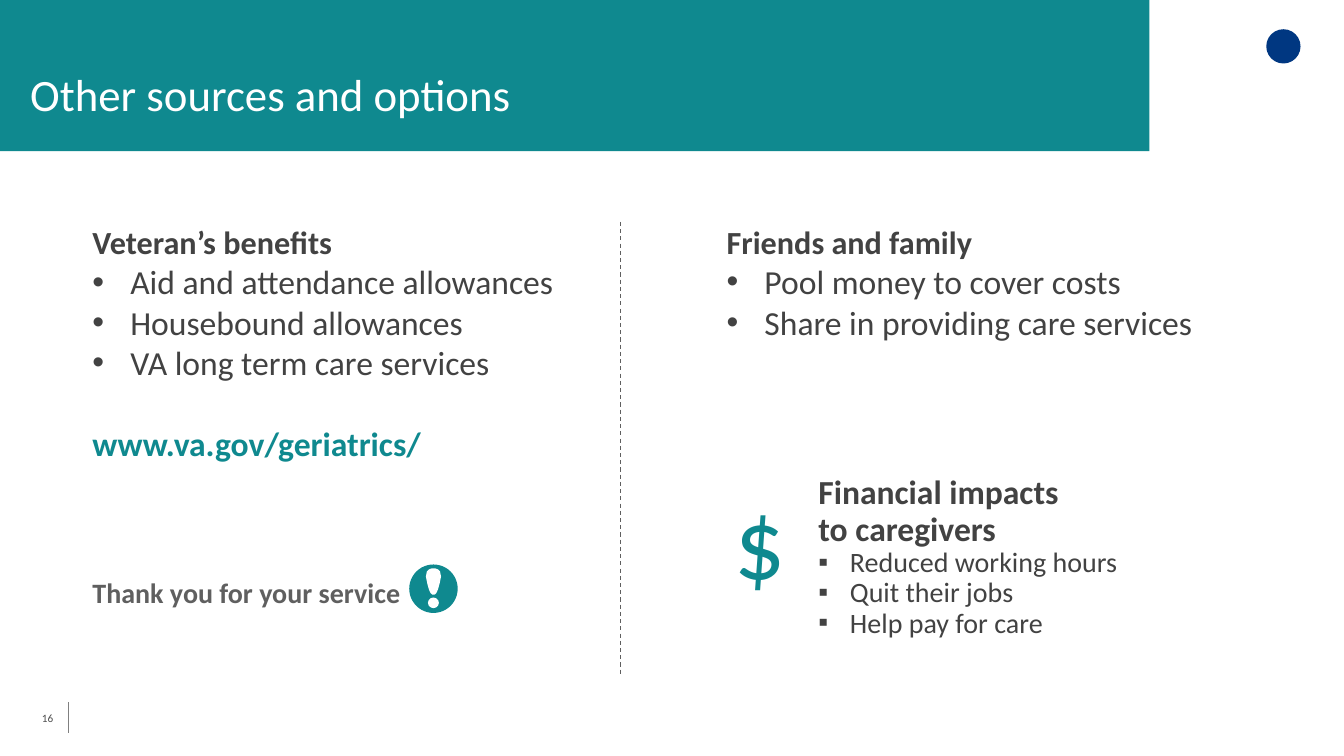
import pptx
import pptx.util
import pptx.dml.color
import pptx.enum.dml
import pptx.enum.shapes
import pptx.enum.text
from lxml import etree
from pptx.oxml.ns import qn

Pt = pptx.util.Pt
RGB = pptx.dml.color.RGBColor
SHAPE = pptx.enum.shapes.MSO_SHAPE
ANCHOR = pptx.enum.text.MSO_ANCHOR
ALIGN = pptx.enum.text.PP_ALIGN

TEAL = RGB(0x0F, 0x89, 0x8F)
NAVY = RGB(0x00, 0x37, 0x81)
WHITE = RGB(0xFF, 0xFF, 0xFF)
DARK = RGB(0x42, 0x42, 0x42)
GREY = RGB(0x5F, 0x5F, 0x5F)
RULE = RGB(0x80, 0x80, 0x80)
NUMBER = RGB(0x4D, 0x4D, 0x4D)
FONT = "Calibri"


def add_text(tf, text, size=24, color=DARK, bold=False, bullet=None, indent=0,
             spacing=None, before=0, align=ALIGN.LEFT):
    """Add one paragraph; a vertical tab in the text breaks the line."""
    p = tf.paragraphs[0] if not tf.text else tf.add_paragraph()
    p.text = text
    p.alignment = align
    p.space_before = Pt(before)
    if spacing:
        p.line_spacing = spacing
    for r in p.runs:
        r.font.name = FONT
        r.font.size = Pt(size)
        r.font.bold = bold
        r.font.color.rgb = color
    if bullet:
        pPr = p._p.get_or_add_pPr()
        pPr.set("marL", str(Pt(indent)))
        pPr.set("indent", str(-Pt(indent)))
        etree.SubElement(pPr, qn("a:buFont")).set("typeface", "Arial")
        etree.SubElement(pPr, qn("a:buChar")).set("char", bullet)


def add_box(s, x, y, w, h):
    tf = s.shapes.add_textbox(Pt(x), Pt(y), Pt(w), Pt(h)).text_frame
    tf.word_wrap = True
    return tf


def paint(sp, color):
    sp.shadow.inherit = False
    sp.fill.solid()
    sp.fill.fore_color.rgb = color
    sp.line.fill.background()
    return sp


def add_shape(s, kind, x, y, w, h, color):
    return paint(s.shapes.add_shape(kind, Pt(x), Pt(y), Pt(w), Pt(h)), color)


def add_rule(s, x, top, bottom, color, dashed=False):
    line = s.shapes.add_connector(pptx.enum.shapes.MSO_CONNECTOR.STRAIGHT,
                                  Pt(x), Pt(top), Pt(x), Pt(bottom))
    line.line.color.rgb = color
    line.line.width = Pt(0.75)
    if dashed:
        line.line.dash_style = pptx.enum.dml.MSO_LINE.DASH
    etree.SubElement(line._element.spPr, qn("a:effectLst"))


def add_header(s, x, y, w, h):
    tf = add_shape(s, SHAPE.RECTANGLE, x, y, w, h, TEAL).text_frame
    tf.word_wrap = True
    tf.vertical_anchor = ANCHOR.BOTTOM
    tf.margin_left = tf.margin_right = tf.margin_top = tf.margin_bottom = Pt(21.6)
    add_text(tf, "Other sources and options", size=32, color=WHITE, before=6)
    add_shape(s, SHAPE.OVAL, x + w + 83.5, y + 20.9, 24.5, 24.5, NAVY)


def add_footer(s, x, y, w, h):
    tf = add_box(s, x, y, w, h)
    tf.margin_left = tf.margin_right = 0
    tf.vertical_anchor = ANCHOR.MIDDLE
    add_text(tf, "16", size=8, color=NUMBER)
    add_rule(s, x + 19, y + 3, y + 25, RULE)


def add_topic(s, x, y, w, h, heading, items, address=None):
    tf = add_box(s, x, y, w, h)
    add_text(tf, heading, size=23, bold=True)
    for item in items:
        add_text(tf, item, bullet="•", indent=27)
    if address:
        add_text(tf, address, color=TEAL, bold=True, before=29)


def add_badge(s, x, y, size):
    """Exclamation mark on a disc, drawn from half-widths at each height."""
    add_shape(s, SHAPE.OVAL, x, y, size, size, TEAL)
    mid = x + size / 2
    profile = [(2.9, 1.5), (3.6, 3.3), (5, 4.7), (8.6, 5.4),
               (13.7, 4.4), (18, 3.2), (20.5, 2), (21.6, 0.8)]
    right = [(Pt(mid + half), Pt(y + down)) for down, half in profile]
    left = [(Pt(mid - half), Pt(y + down)) for down, half in reversed(profile)]
    stroke = s.shapes.build_freeform(*right[0])
    stroke.add_line_segments(right[1:] + left, close=True)
    paint(stroke.convert_to_shape(), WHITE)
    add_shape(s, SHAPE.OVAL, mid - 3.9, y + 23.6, 7.8, 7.6, WHITE)


def add_thanks(s, x, y, w, h):
    add_text(add_box(s, x, y, w, h), "Thank you for your service",
             size=20, color=GREY, bold=True, spacing=0.9)
    add_badge(s, x + 233.3, y - 7.2, 34.6)


def add_impacts(s, x, y, w, h):
    tf = add_box(s, x + 65.5, y, w - 65.5, h)
    add_text(tf, "Financial impacts \vto caregivers", bold=True, spacing=0.9)
    for item in ("Reduced working hours", "Quit their jobs", "Help pay for care"):
        add_text(tf, item, size=20, bullet="▪", indent=22.5, spacing=0.9)
    add_text(add_box(s, x, y + 12.2, 62, 87), "$", size=72, color=TEAL,
             spacing=0.9, align=ALIGN.CENTER)


def main():
    prs = pptx.Presentation()
    prs.slide_width, prs.slide_height = Pt(960), Pt(540)
    s = prs.slides.add_slide(prs.slide_layouts[6])
    left, right, top, width = 59, 512, 155.5, 374
    add_header(s, 0, 0, 821, 108)
    add_footer(s, 30, 498.5, 29, 29)
    add_topic(s, left, top, width, 181, "Veteran’s benefits",
              ["Aid and attendance allowances", "Housebound allowances",
               "VA long term care services"], "www.va.gov/geriatrics/")
    add_topic(s, right, top, width, 122, "Friends and family",
              ["Pool money to cover costs", "Share in providing care services"])
    add_thanks(s, left, 410.4, 252, 50)
    add_impacts(s, right, 336.3, 302, 112)
    add_rule(s, 443, 158.5, 483, GREY, dashed=True)
    prs.save("out.pptx")


if __name__ == "__main__":
    main()
